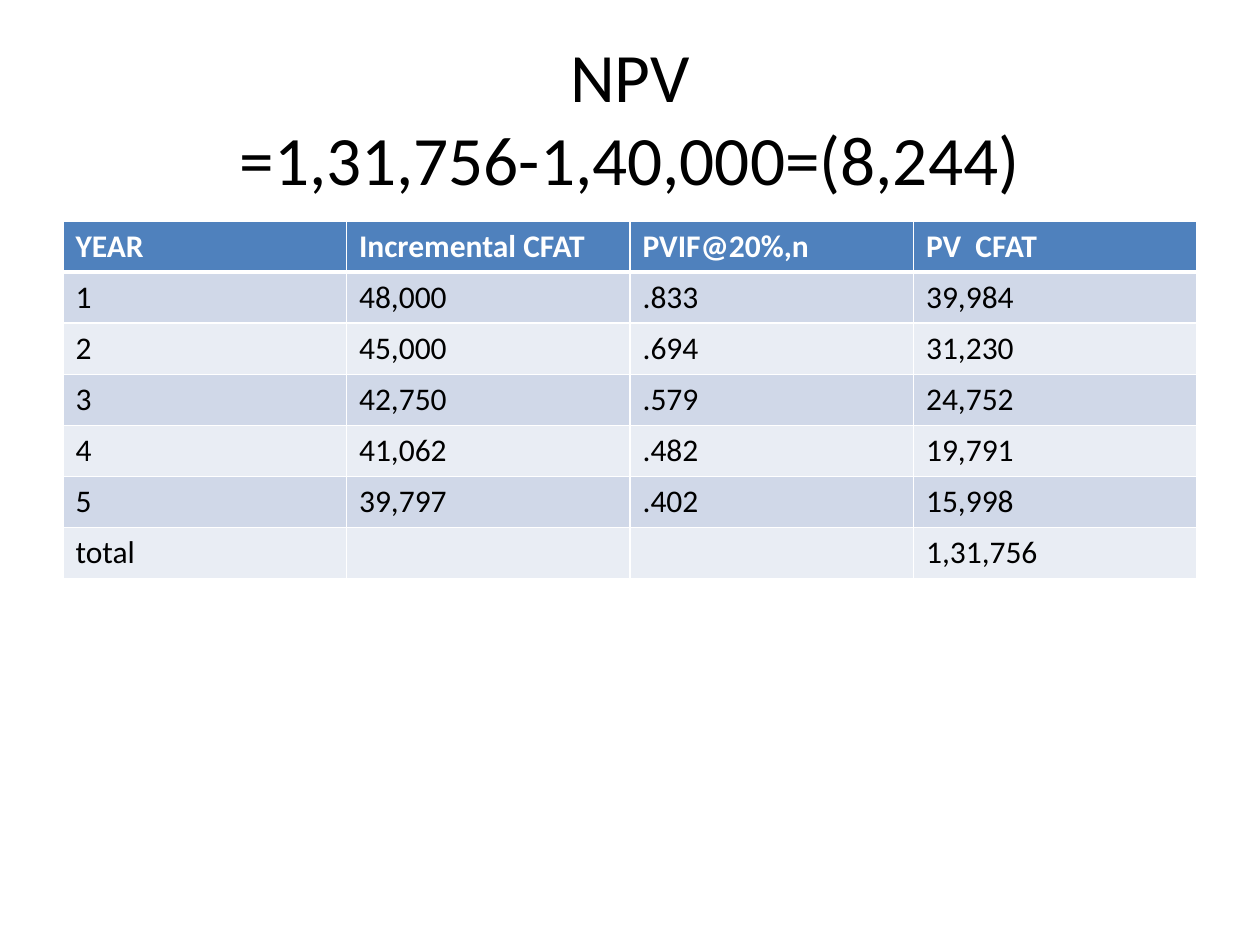
from dataclasses import dataclass

from lxml.etree import SubElement
from pptx import Presentation
from pptx.dml.color import RGBColor
from pptx.enum.text import MSO_ANCHOR, MSO_AUTO_SIZE, PP_ALIGN
from pptx.oxml.ns import qn
from pptx.util import Pt

EMU_PER_PX = 914400 / 126


@dataclass(frozen=True)
class Theme:
    font: str = "Calibri"
    title_size: float = 39.6
    table_size: float = 18
    ink: str = "000000"
    header_ink: str = "FFFFFF"
    header_fill: str = "4F81BD"
    band_fills: tuple = ("D0D8E8", "E9EDF4")
    border: str = "FFFFFF"
    border_width: float = 1
    header_rule_width: float = 3


THEME = Theme()

NPV_FORMULA = "NPV\v=1,31,756-1,40,000=(8,244)"
CASH_FLOWS = [
    ("YEAR", "Incremental CFAT", "PVIF@20%,n", "PV  CFAT"),
    ("1", "48,000", ".833", "39,984"),
    ("2", "45,000", ".694", "31,230"),
    ("3", "42,750", ".579", "24,752"),
    ("4", "41,062", ".482", "19,791"),
    ("5", "39,797", ".402", "15,998"),
    ("total", "", "", "1,31,756"),
]


def px(length):
    return round(length * EMU_PER_PX)


def style_font(font, size, color, bold=False):
    font.name = THEME.font
    font.size = Pt(size)
    font.bold = bold
    font.color.rgb = RGBColor.from_string(color)


def add_borders(cell, bottom_width):
    properties = cell._tc.get_or_add_tcPr()
    widths = {"L": THEME.border_width, "R": THEME.border_width,
              "T": THEME.border_width, "B": bottom_width}
    for side, width in widths.items():
        line = SubElement(properties, qn(f"a:ln{side}"), w=str(Pt(width)))
        fill = SubElement(line, qn("a:solidFill"))
        SubElement(fill, qn("a:srgbClr"), val=THEME.border)


def place_title(slide, left, top, width, height):
    title = slide.shapes.title
    title.left, title.top = px(left), px(top)
    title.width, title.height = px(width), px(height)
    frame = title.text_frame
    frame.text = NPV_FORMULA
    frame.word_wrap = True
    frame.auto_size = MSO_AUTO_SIZE.NONE
    frame.vertical_anchor = MSO_ANCHOR.MIDDLE
    heading = frame.paragraphs[0]
    heading.alignment = PP_ALIGN.CENTER
    style_font(heading.font, THEME.title_size, THEME.ink)


def format_cell(cell, text, row_index):
    is_header = row_index == 0
    if is_header:
        fill, ink = THEME.header_fill, THEME.header_ink
        rule_width = THEME.header_rule_width
    else:
        fill, ink = THEME.band_fills[(row_index - 1) % 2], THEME.ink
        rule_width = THEME.border_width
    add_borders(cell, rule_width)
    cell.fill.solid()
    cell.fill.fore_color.rgb = RGBColor.from_string(fill)
    cell.text = text
    style_font(cell.text_frame.paragraphs[0].font, THEME.table_size, ink, is_header)


def place_cash_flows(slide, left, top, width, height):
    row_count, column_count = len(CASH_FLOWS), len(CASH_FLOWS[0])
    table = slide.shapes.add_table(
        row_count, column_count, px(left), px(top), px(width), px(height)
    ).table
    for row_index, values in enumerate(CASH_FLOWS):
        for column_index, text in enumerate(values):
            format_cell(table.cell(row_index, column_index), text, row_index)


def main():
    presentation = Presentation()
    presentation.slide_width, presentation.slide_height = px(1260), px(945)
    slide = presentation.slides.add_slide(presentation.slide_layouts[5])
    place_title(slide, 63, 38, 1134, 157)
    place_cash_flows(slide, 63, 221, 1134, 358)
    presentation.save("out.pptx")


if __name__ == "__main__":
    main()
